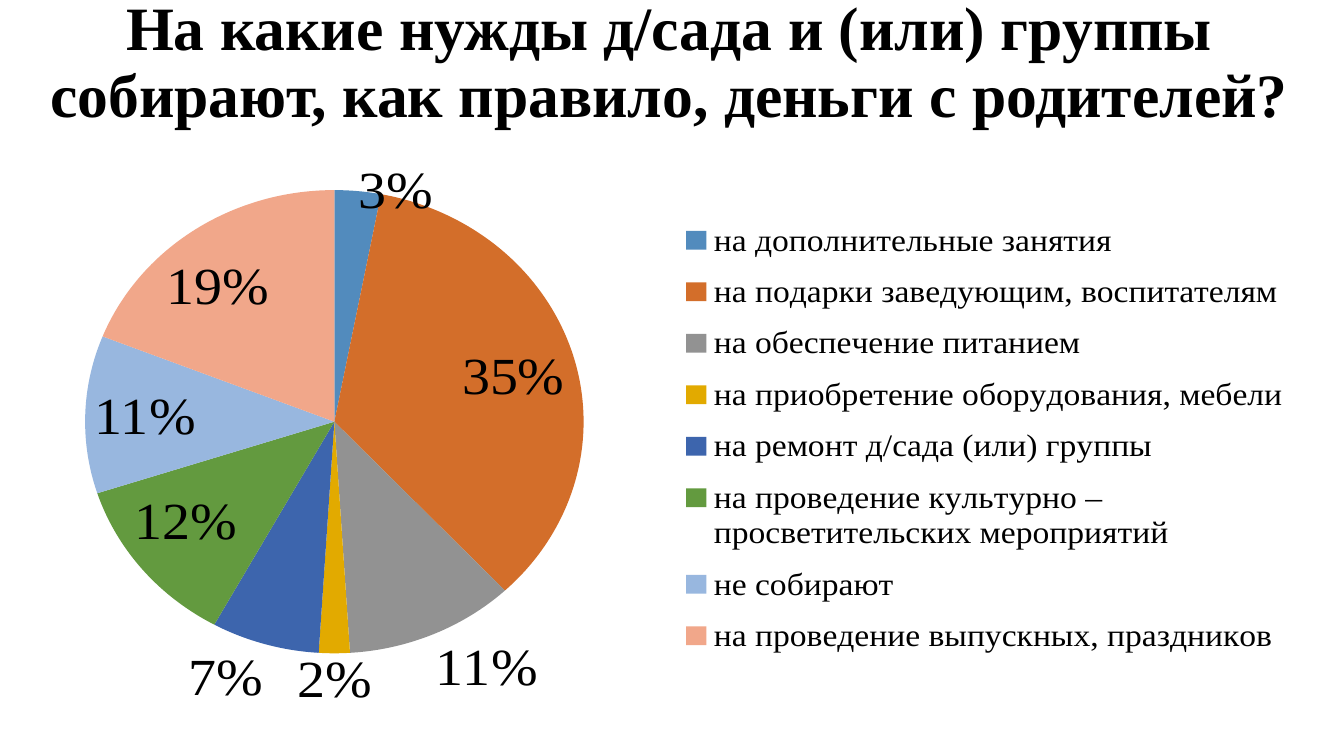
from lxml import etree
from pptx import Presentation
from pptx.chart.data import CategoryChartData
from pptx.dml.color import RGBColor
from pptx.enum.chart import XL_CHART_TYPE, XL_LABEL_POSITION, XL_LEGEND_POSITION
from pptx.enum.text import MSO_ANCHOR, MSO_AUTO_SIZE, PP_ALIGN
from pptx.oxml import parse_xml
from pptx.oxml.ns import nsdecls, qn
from pptx.util import Cm, Pt

PIE = XL_CHART_TYPE.PIE
LEGEND_RIGHT = XL_LEGEND_POSITION.RIGHT
BEST_FIT = XL_LABEL_POSITION.BEST_FIT
MIDDLE = MSO_ANCHOR.MIDDLE
NO_AUTOFIT = MSO_AUTO_SIZE.NONE
CENTER = PP_ALIGN.CENTER

FONT = "Times New Roman"
BLACK = RGBColor(0x00, 0x00, 0x00)
BLUE = RGBColor(0x52, 0x8B, 0xBD)
ORANGE = RGBColor(0xD3, 0x6E, 0x2A)
GRAY = RGBColor(0x92, 0x92, 0x92)
GOLD = RGBColor(0xE2, 0xAA, 0x00)
NAVY = RGBColor(0x3D, 0x65, 0xAD)
GREEN = RGBColor(0x63, 0x9A, 0x3F)
LIGHT_BLUE = RGBColor(0x98, 0xB7, 0xDF)
PEACH = RGBColor(0xF1, 0xA7, 0x8A)

TITLE = "На какие нужды д/сада и (или) группы собирают, как правило, деньги с родителей?"
NEEDS = [
    ("на дополнительные занятия", 3, BLUE),
    ("на подарки заведующим, воспитателям", 35, ORANGE),
    ("на обеспечение питанием", 11, GRAY),
    ("на приобретение оборудования, мебели", 2, GOLD),
    ("на ремонт д/сада (или) группы", 7, NAVY),
    ("на проведение культурно – просветительских мероприятий", 12, GREEN),
    ("не собирают", 11, LIGHT_BLUE),
    ("на проведение выпускных, праздников", 19, PEACH),
]


def style_font(font, size, bold=False):
    """Set the slide's typeface in black at the given size."""
    font.name = FONT
    font.size = Pt(size)
    font.bold = bold
    font.color.rgb = BLACK


def set_layout(element, x, y, w, h, inner=False):
    """Place a plot area or legend by fractions of the chart."""
    for old in element.findall(qn("c:layout")):
        element.remove(old)
    layout = parse_xml(f"<c:layout {nsdecls('c')}><c:manualLayout/></c:layout>")
    settings = [("layoutTarget", "inner")] if inner else []
    settings += [("xMode", "edge"), ("yMode", "edge"), ("x", x), ("y", y), ("w", w), ("h", h)]
    for tag, value in settings:
        etree.SubElement(layout[0], qn(f"c:{tag}")).set("val", str(value))
    position = element.find(qn("c:legendPos"))
    if position is None:
        element.insert(0, layout)
    else:
        position.addnext(layout)


def add_title(slide, left, top, width, height):
    """Fill the title placeholder within the given box."""
    sp = slide.shapes.title
    sp.left, sp.top, sp.width, sp.height = left, top, width, height
    tf = sp.text_frame
    tf.text = TITLE
    tf.word_wrap = True
    tf.auto_size = NO_AUTOFIT
    tf.vertical_anchor = MIDDLE
    p = tf.paragraphs[0]
    p.alignment = CENTER
    p.line_spacing = 0.9
    style_font(p.font, 44, bold=True)


def add_needs_pie(slide, left, top, width, height):
    """Add the pie of collected money with its legend on the right."""
    data = CategoryChartData()
    data.categories = [name for name, _, _ in NEEDS]
    data.add_series("Series 1", [share for _, share, _ in NEEDS])
    chart = slide.shapes.add_chart(PIE, left, top, width, height, data).chart
    chart.has_title = False
    style_font(chart.font, 10)

    plot = chart.plots[0]
    plot.vary_by_categories = True
    for i, (_, _, color) in enumerate(NEEDS):
        fill = plot.series[0].points[i].format.fill
        fill.solid()
        fill.fore_color.rgb = color
    plot.has_data_labels = True
    labels = plot.data_labels
    labels.show_percentage = True
    labels.show_value = False
    labels.number_format = "0%"
    labels.number_format_is_linked = False
    labels.position = BEST_FIT
    style_font(labels.font, 40)

    chart.has_legend = True
    legend = chart.legend
    legend.position = LEGEND_RIGHT
    legend.include_in_layout = False
    style_font(legend.font, 24)
    plot_area = chart.element.find(".//" + qn("c:plotArea"))
    set_layout(plot_area, 0.04, 0.05, 0.4, 0.85, inner=True)
    set_layout(chart.element.find(".//" + qn("c:legend")), 0.5, 0.08, 0.49, 0.85)


def main():
    """Build the slide and save it."""
    prs = Presentation()
    prs.slide_width, prs.slide_height = Cm(33.87), Cm(19.05)
    slide = prs.slides.add_slide(prs.slide_layouts[5])
    add_title(slide, Cm(-0.2), Cm(-0.23), Cm(34.16), Cm(3.68))
    add_needs_pie(slide, Cm(0.64), Cm(3.25), Cm(32.44), Cm(14.78))
    prs.save("out.pptx")


if __name__ == "__main__":
    main()
